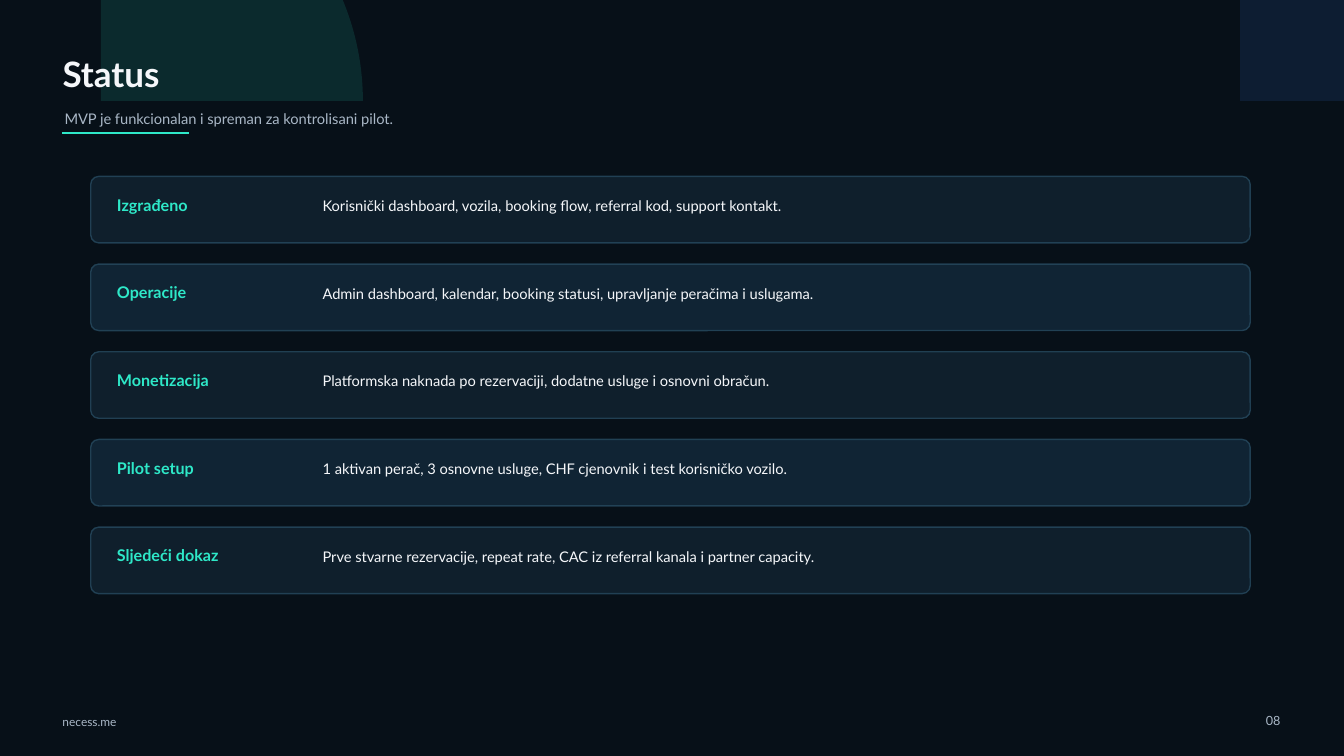
"""Build the dark "Status" slide with five labelled status cards."""
from lxml.etree import SubElement
from pptx import Presentation
from pptx.dml.color import RGBColor
from pptx.enum.shapes import MSO_CONNECTOR, MSO_SHAPE
from pptx.enum.text import MSO_ANCHOR, MSO_AUTO_SIZE, PP_ALIGN
from pptx.oxml.ns import qn
from pptx.util import Pt

PX = 9144
NIGHT, MINT, BLUE, WHITE, GREY = "071018", "2EE8C8", "3B82F6", "F5F7FA", "A9B7C6"
CARD_FILLS, CARD_EDGE = ("0F1F2C", "102434"), "25475C"
FRAME = {
    "margin_left": 0, "margin_top": 0, "margin_right": 0, "margin_bottom": 0,
    "word_wrap": True, "auto_size": MSO_AUTO_SIZE.NONE,
    "vertical_anchor": MSO_ANCHOR.MIDDLE,
}
ROWS = [
    ("Izgrađeno", "Korisnički dashboard, vozila, booking flow, referral kod, support kontakt."),
    ("Operacije", "Admin dashboard, kalendar, booking statusi, upravljanje peračima i uslugama."),
    ("Monetizacija", "Platformska naknada po rezervaciji, dodatne usluge i osnovni obračun."),
    ("Pilot setup", "1 aktivan perač, 3 osnovne usluge, CHF cjenovnik i test korisničko vozilo."),
    ("Sljedeći dokaz", "Prve stvarne rezervacije, repeat rate, CAC iz referral kanala i partner capacity."),
]


def paint(fill, colour, alpha=100):
    """Fill with a hex colour at the given opacity in percent."""
    fill.solid()
    fill.fore_color.rgb = RGBColor.from_string(colour)
    if alpha < 100:
        clr = fill._xPr.find(qn("a:solidFill"))[0]
        SubElement(clr, qn("a:alpha")).set("val", str(alpha * 1000))


def write(box, text, size, colour, bold=False, align=PP_ALIGN.LEFT):
    """Set one formatted line of text in a box."""
    tf = box.text_frame
    for name, value in FRAME.items():
        setattr(tf, name, value)
    p = tf.paragraphs[0]
    p.alignment = align
    r = p.add_run()
    r.text = text
    for name, value in {"name": "Lato", "size": Pt(size), "bold": bold}.items():
        setattr(r.font, name, value)
    paint(r.font.fill, colour)


prs = Presentation()
prs.slide_width, prs.slide_height = 1333 * PX, 750 * PX
s = prs.slides.add_slide(prs.slide_layouts[5])
paint(s.background.fill, NIGHT)

title = s.shapes.title
for name, value in {"left": 62, "top": 45, "width": 840, "height": 55}.items():
    setattr(title, name, value * PX)
write(title, "Status", 25, WHITE, True)

for left, top, size, colour in [(-160, -160, 520, MINT), (950, -180, 560, BLUE)]:
    arc = s.shapes.add_shape(MSO_SHAPE.ARC, left * PX, top * PX, size * PX, size * PX)
    arc.shadow.inherit = False
    paint(arc.fill, colour, 12)
    arc.line.fill.background()
    title._element.addprevious(arc._element)

for left, top, width, height, text, size, align in [
    (64, 100, 860, 36, "MVP je funkcionalan i spreman za kontrolisani pilot.", 10.5, PP_ALIGN.LEFT),
    (62, 705, 140, 22, "necess.me", 8.5, PP_ALIGN.LEFT),
    (1225, 702, 45, 25, "08", 9, PP_ALIGN.RIGHT),
]:
    box = s.shapes.add_textbox(left * PX, top * PX, width * PX, height * PX)
    write(box, text, size, GREY, align=align)

rule = s.shapes.add_connector(MSO_CONNECTOR.STRAIGHT, 62 * PX, 132 * PX, 187 * PX, 132 * PX)
SubElement(rule._element.spPr, qn("a:effectLst"))
rule.line.width = Pt(2)
paint(rule.line.fill, MINT)

for i, (label, detail) in enumerate(ROWS):
    top = 175 + 87 * i
    card = s.shapes.add_shape(MSO_SHAPE.ROUNDED_RECTANGLE, 90 * PX, top * PX, 1150 * PX, 66 * PX)
    card.adjustments[0] = 0.12
    card.shadow.inherit = False
    paint(card.fill, CARD_FILLS[i % 2])
    card.line.width = Pt(1)
    paint(card.line.fill, CARD_EDGE, 85)
    write(s.shapes.add_textbox(116 * PX, (top + 18) * PX, 210 * PX, 20 * PX), label, 11.5, MINT, True)
    write(s.shapes.add_textbox(320 * PX, (top + 17) * PX, 860 * PX, 24 * PX), detail, 10.5, WHITE)

prs.save("out.pptx")
